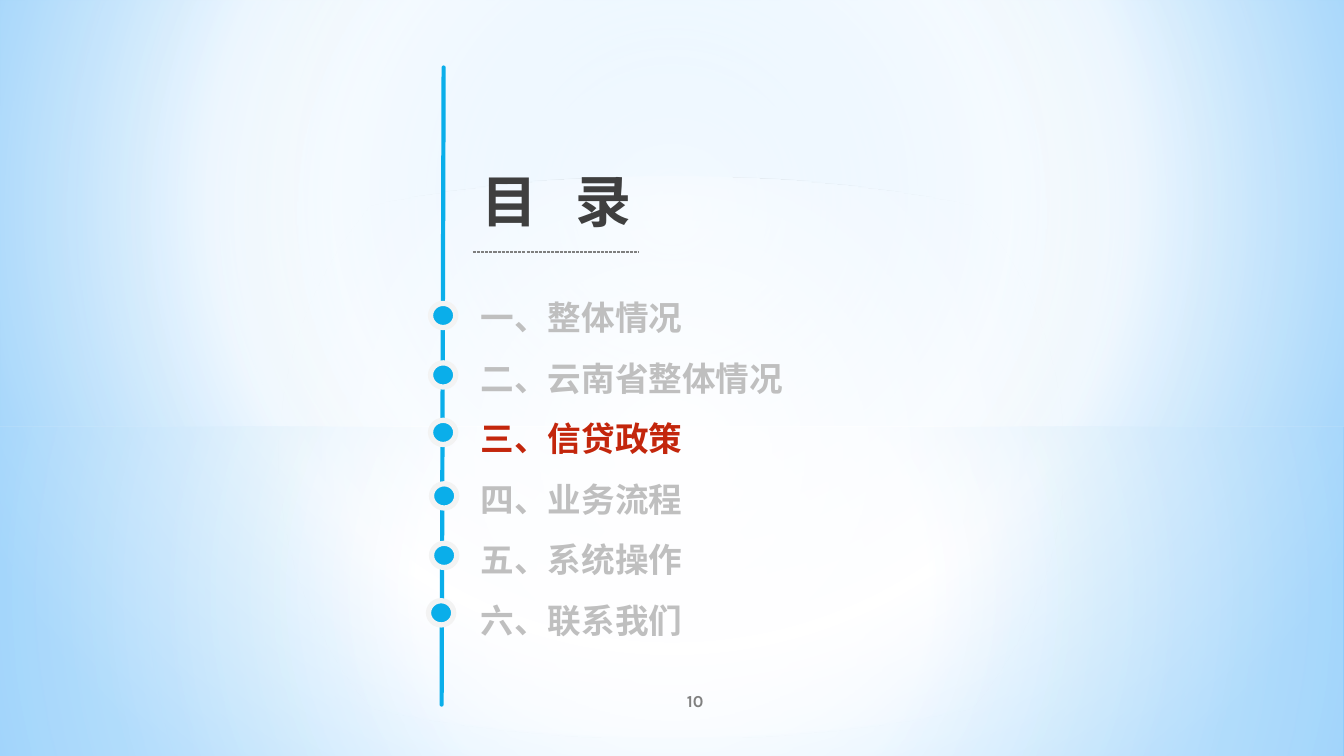
from lxml import etree
from pptx import Presentation
from pptx.dml.color import RGBColor
from pptx.enum.dml import MSO_LINE
from pptx.enum.shapes import MSO_CONNECTOR, MSO_SHAPE
from pptx.enum.text import MSO_ANCHOR, MSO_AUTO_SIZE as AutoSize, PP_ALIGN
from pptx.oxml.ns import qn
from pptx.util import Inches, Pt

colour = RGBColor.from_string
CJK_FONT = "Noto Sans CJK SC"
BLUE, GREY, RED = "0AAEEA", "BFBFBF", "C3260C"


def set_gradient(element, stops, centre=None):
    """Refill the element's gradient with (position, colour, opacity) stops in percent.

    centre gives left, top, right and bottom of a circular path; without it
    the gradient runs from top to bottom.
    """
    grad = element.find(".//" + qn("a:gradFill"))
    for child in list(grad):
        grad.remove(child)
    stop_list = etree.SubElement(grad, qn("a:gsLst"))
    for position, hex_colour, opacity in stops:
        stop = etree.SubElement(stop_list, qn("a:gs"), pos=str(position * 1000))
        tone = etree.SubElement(stop, qn("a:srgbClr"), val=hex_colour)
        if opacity < 100:
            etree.SubElement(tone, qn("a:alpha"), val=str(opacity * 1000))
    if centre is None:
        etree.SubElement(grad, qn("a:lin"), ang="5400000", scaled="0")
    else:
        path = etree.SubElement(grad, qn("a:path"), attrib={"path": "circle"})
        sides = {side: str(value * 1000) for side, value in zip("ltrb", centre)}
        etree.SubElement(path, qn("a:fillToRect"), attrib=sides)


def add_span(para, text, size, font, hex_colour):
    span = para.add_run()
    span.text = text
    span.font.size = Pt(size)
    span.font.bold = True
    span.font.name = font
    span.font.color.rgb = colour(hex_colour)
    properties = span.font._element if hasattr(span.font, "_element") else span._r.get_or_add_rPr()
    etree.SubElement(properties, qn("a:ea"), typeface=CJK_FONT)
    return span


deck = Presentation()
deck.slide_width, deck.slide_height = Inches(13.33), Inches(7.5)
page = deck.slides.add_slide(deck.slide_layouts[6])
shapes = page.shapes

# Background and its translucent layers
page.background.fill.gradient()
set_gradient(page.element, [(0, "9ED5FF", 100), (60, "FFFFFF", 100), (100, "5BB9FF", 100)],
             (20, 10, 20, 60))

MIDDLE = (50, 50, 50, 50)
layers = [
    (MSO_SHAPE.RECTANGLE, 4.23, 3.27, MIDDLE,
     [(0, "FFFFFF", 91), (37, "FFFFFF", 76), (100, "B4DCFA", 79)]),
    (MSO_SHAPE.RECTANGLE, 0, 4.23, MIDDLE,
     [(0, "FFFFFF", 89), (48, "FFFFFF", 62), (100, "B4DCFA", 79)]),
    (MSO_SHAPE.RECTANGLE, 2.9, 2.5, None,
     [(0, "FFFFFF", 0), (29, "FFFFFF", 30), (45, "B4DCFA", 40),
      (55, "FFFFFF", 26), (65, "B4DCFA", 60), (100, "FFFFFF", 0)]),
    (MSO_SHAPE.OVAL, 1.75, 5.58, MIDDLE, [(0, "FFFFFF", 100), (54, "FFFFFF", 0)]),
]
for kind, top, height, centre, stops in layers:
    layer = shapes.add_shape(kind, 0, Inches(top), deck.slide_width, Inches(height))
    layer.shadow.inherit = False
    layer.line.fill.background()
    layer.fill.gradient()
    set_gradient(layer.element, stops, centre)

# Timeline and the rule under the heading
lines = [
    (4.4, 0.67, 4.38, 6.99, BLUE, 3, MSO_LINE.SOLID, "rnd"),
    (4.69, 2.5, 6.33, 2.5, "7F7F7F", 0.75, MSO_LINE.SQUARE_DOT, "flat"),
]
for x1, y1, x2, y2, hex_colour, width, dash, cap in lines:
    rule = shapes.add_connector(MSO_CONNECTOR.STRAIGHT, Inches(x1), Inches(y1),
                                Inches(x2), Inches(y2))
    rule.line.color.rgb = colour(hex_colour)
    rule.line.width = Pt(width)
    rule.line.dash_style = dash
    properties = rule.element.spPr
    properties.find(qn("a:ln")).set("cap", cap)
    etree.SubElement(properties, qn("a:effectLst"))

for left, top in [(4.27, 3.01), (4.27, 3.6), (4.27, 4.17),
                  (4.28, 4.8), (4.28, 5.39), (4.25, 5.96)]:
    dot = shapes.add_shape(MSO_SHAPE.OVAL, Inches(left), Inches(top), Inches(0.25), Inches(0.24))
    dot.shadow.inherit = False
    dot.fill.solid()
    dot.fill.fore_color.rgb = colour(BLUE)
    dot.line.color.rgb = colour("F3F3F3")
    dot.line.width = Pt(3.75)

# Heading, with a widened space between its two characters
heading = shapes.add_textbox(Inches(4.66), Inches(1.6), Inches(1.7), Inches(0.77)).text_frame
heading.word_wrap = False
heading.auto_size = AutoSize.SHAPE_TO_FIT_TEXT
para = heading.paragraphs[0]
para.alignment = PP_ALIGN.RIGHT
first, gap, last = [add_span(para, text, 40, "Calibri", "3F3F3F") for text in "目 录"]
gap.font._element.set("spc", "1800")

# Page number
number = shapes.add_textbox(Inches(5.56), Inches(6.75), Inches(2.67), Inches(0.4)).text_frame
number.word_wrap = True
number.vertical_anchor = MSO_ANCHOR.MIDDLE
number.paragraphs[0].alignment = PP_ALIGN.CENTER
add_span(number.paragraphs[0], "10", 12, "Karla", "808080")

# Agenda, with the current chapter in red
agenda = shapes.add_textbox(Inches(4.67), Inches(2.7), Inches(4.53), Inches(3.74)).text_frame
agenda.word_wrap = True
agenda.auto_size = AutoSize.SHAPE_TO_FIT_TEXT
chapters = ["一、整体情况", "二、云南省整体情况", "三、信贷政策",
            "四、业务流程", "五、系统操作", "六、联系我们"]
current = "三、信贷政策"
for index, chapter in enumerate(chapters):
    para = agenda.paragraphs[0] if index == 0 else agenda.add_paragraph()
    para.line_spacing = 1.5
    add_span(para, chapter, 24, CJK_FONT, RED if chapter == current else GREY)

deck.save("out.pptx")
